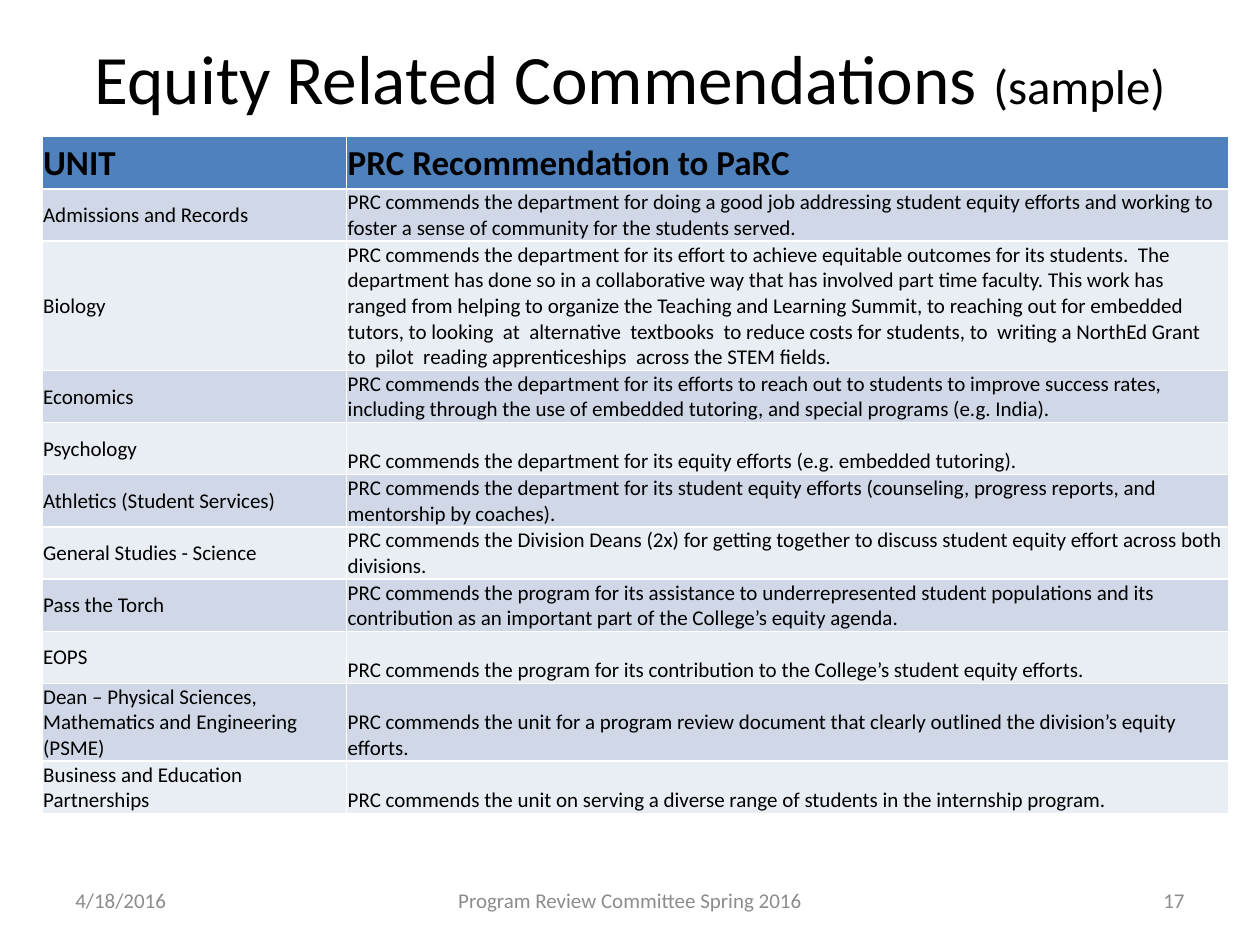
from pptx import Presentation
from pptx.dml.color import RGBColor
from pptx.enum.text import MSO_ANCHOR, MSO_AUTO_SIZE, PP_ALIGN
from pptx.util import Cm, Pt

BLACK = RGBColor(0x00, 0x00, 0x00)
GREY = RGBColor(0x8C, 0x8C, 0x8C)
HEADER_BLUE = RGBColor(0x4F, 0x81, 0xBD)
BAND_DARK = RGBColor(0xD0, 0xD8, 0xE8)
BAND_LIGHT = RGBColor(0xE9, 0xED, 0xF4)

HEADINGS = ("UNIT", "PRC Recommendation to PaRC")
COMMENDATIONS = [
    ("Admissions and Records",
     "PRC commends the department for doing a good job addressing student equity "
     "efforts and working to foster a sense of community for the students served."),
    ("Biology",
     "PRC commends the department for its effort to achieve equitable outcomes for "
     "its students.  The department has done so in a collaborative way that has "
     "involved part time faculty. This work has ranged from helping to organize the "
     "Teaching and Learning Summit, to reaching out for embedded  tutors, to looking  "
     "at  alternative  textbooks  to reduce costs for students, to  writing a NorthEd "
     "Grant  to  pilot  reading apprenticeships  across the STEM fields."),
    ("Economics",
     "PRC commends the department for its efforts to reach out to students to improve "
     "success rates, including through the use of embedded tutoring, and special "
     "programs (e.g. India)."),
    ("Psychology",
     "PRC commends the department for its equity efforts (e.g. embedded tutoring)."),
    ("Athletics (Student Services)",
     "PRC commends the department for its student equity efforts (counseling, "
     "progress reports, and mentorship by coaches)."),
    ("General Studies - Science",
     "PRC commends the Division Deans (2x) for getting together to discuss student "
     "equity effort across both divisions."),
    ("Pass the Torch",
     "PRC commends the program for its assistance to underrepresented student "
     "populations and its contribution as an important part of the College’s equity "
     "agenda."),
    ("EOPS",
     "PRC commends the program for its contribution to the College’s student equity "
     "efforts."),
    ("Dean – Physical Sciences, Mathematics and Engineering (PSME)",
     "PRC commends the unit for a program review document that clearly outlined the "
     "division’s equity efforts."),
    ("Business and Education Partnerships",
     "PRC commends the unit on serving a diverse range of students in the internship "
     "program."),
]


def apply(target, values):
    for name, value in values.items():
        setattr(target, name, value)


class SlideBuilder:
    """Holds the text style and the current slide."""

    font_name = "Calibri"
    cell_format = {"margin_left": Cm(0.02), "margin_right": Cm(0.02),
                   "margin_top": Cm(0.02), "margin_bottom": Cm(0)}

    def __init__(self, page):
        self.page = page

    def add_span(self, para, text, size, color=BLACK, bold=False):
        span = para.add_run()
        span.text = text
        apply(span.font, {"name": self.font_name, "size": Pt(size), "bold": bold})
        span.font.color.rgb = color

    def title(self, parts, left, top, width, height):
        box = self.page.shapes.title
        apply(box, {"left": Cm(left), "top": Cm(top),
                    "width": Cm(width), "height": Cm(height)})
        apply(box.text_frame, {"vertical_anchor": MSO_ANCHOR.MIDDLE,
                               "auto_size": MSO_AUTO_SIZE.NONE, "word_wrap": True})
        para = box.text_frame.paragraphs[0]
        para.alignment = PP_ALIGN.CENTER
        for text, size in parts:
            self.add_span(para, text, size)

    def footer(self, text, left, width, alignment):
        box = self.page.shapes.add_textbox(Cm(left), Cm(17.65), Cm(width), Cm(1.01))
        apply(box.text_frame, {"vertical_anchor": MSO_ANCHOR.MIDDLE, "word_wrap": True})
        para = box.text_frame.paragraphs[0]
        para.alignment = alignment
        self.add_span(para, text, 12, GREY)

    def cell(self, cell, text, fill, anchor, size, bold=False):
        apply(cell, {**self.cell_format, "vertical_anchor": anchor})
        cell.fill.solid()
        cell.fill.fore_color.rgb = fill
        self.add_span(cell.text_frame.paragraphs[0], text, size, bold=bold)

    def table(self, headings, rows, left, top, widths, header_height, row_height):
        height = header_height + row_height * len(rows)
        table = self.page.shapes.add_table(
            len(rows) + 1, len(widths),
            Cm(left), Cm(top), Cm(sum(widths)), Cm(height)).table
        for column, width in zip(table.columns, widths):
            column.width = Cm(width)
        for row in table.rows:
            row.height = Cm(row_height)
        table.rows[0].height = Cm(header_height)

        for column, text in enumerate(headings):
            self.cell(table.cell(0, column), text, HEADER_BLUE,
                      MSO_ANCHOR.MIDDLE, 20, bold=True)
        anchors = (MSO_ANCHOR.MIDDLE, MSO_ANCHOR.BOTTOM)
        for number, texts in enumerate(rows, start=1):
            fill = BAND_DARK if number % 2 else BAND_LIGHT
            for column, (text, anchor) in enumerate(zip(texts, anchors)):
                self.cell(table.cell(number, column), text, fill, anchor, 12)


def main():
    deck = Presentation()
    apply(deck, {"slide_width": Cm(25.4), "slide_height": Cm(19.05)})
    builder = SlideBuilder(deck.slides.add_slide(deck.slide_layouts[5]))

    # Title
    builder.title([("Equity Related Commendations ", 39.6), ("(sample)", 27.9)],
                  1.27, 0.76, 22.86, 1.57)

    # Commendations by unit
    builder.table(HEADINGS, COMMENDATIONS, 0.85, 2.75, (6.14, 17.78), 1.06, 1.05)

    # Footer: date, committee, page number
    builder.footer("4/18/2016", 1.27, 5.93, PP_ALIGN.LEFT)
    builder.footer("Program Review Committee Spring 2016", 8.68, 8.04, PP_ALIGN.CENTER)
    builder.footer("17", 18.2, 5.93, PP_ALIGN.RIGHT)

    deck.save("out.pptx")


if __name__ == "__main__":
    main()
